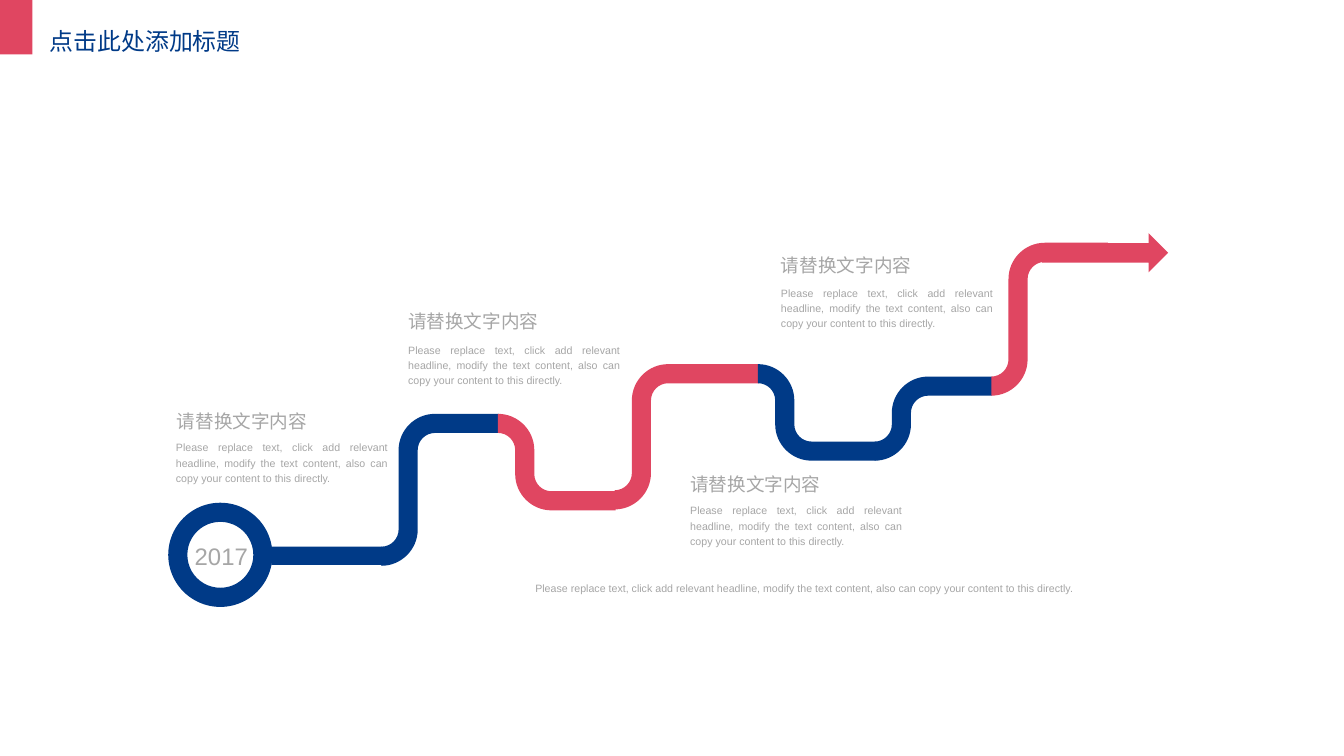
from math import copysign

from lxml import etree
from pptx import Presentation, util as u
from pptx.dml.color import RGBColor
from pptx.enum import shapes, text
from pptx.oxml.ns import qn

COLORS = {"red": "E04661", "navy": "003A87", "grey": "A6A6A6"}
LATIN, CJK = "Arial", "Noto Sans CJK SC"
HEADING = "请替换文字内容"
BODY = ("Please replace text, click add relevant headline, modify the text "
        "content, also can copy your content to this directly.")

# Road geometry in inches; the last figure bends a curve into a quarter circle
BEND_RADIUS = 0.28
HALF_WIDTH = 0.1
ROUNDNESS = 0.55

# Start x, start y, end y, end x, colour
ROAD_BEHIND_RING = [
    (6.43, 5.23, 3.91, 7.94, "red"),
    (9.15, 4.72, 4.04, 10.38, "navy"),
    (7.93, 3.91, 4.72, 9.16, "navy"),
    (3.99, 5.82, 4.43, 5.22, "navy"),
]
ROAD_IN_FRONT = [
    (5.21, 4.43, 5.24, 6.44, "red"),
    (10.37, 4.04, 2.64, 11.59, "red"),
]

# Heading left, top and width, then body left and top
MILESTONES = [
    (4.27, 3.2, 1.83, 4.27, 3.57),
    (7.22, 4.9, 1.91, 7.22, 5.25),
    (8.17, 2.61, 1.97, 8.17, 2.97),
    (1.85, 4.24, 1.75, 1.84, 4.59),
]


def paint(shape, color):
    shape.shadow.inherit = False
    shape.fill.solid()
    shape.fill.fore_color.rgb = RGBColor.from_string(COLORS[color])
    shape.line.fill.background()


def add_block(slide, preset, box, color):
    block = slide.shapes.add_shape(preset, *map(u.Inches, box))
    paint(block, color)
    return block


def add_text(parent, words, box, size=8, color="grey", font=LATIN, align=None,
             anchor=text.MSO_ANCHOR.TOP, inset=(0, 0), spacing=1.2, before=None):
    label = parent.shapes.add_textbox(*map(u.Inches, box))
    frame = label.text_frame
    frame.word_wrap = True
    frame.auto_size = text.MSO_AUTO_SIZE.SHAPE_TO_FIT_TEXT
    frame.vertical_anchor = anchor
    frame.margin_left = frame.margin_right = u.Inches(inset[0])
    frame.margin_top = frame.margin_bottom = u.Inches(inset[1])
    paragraph = frame.paragraphs[0]
    paragraph.alignment = align
    paragraph.line_spacing = spacing
    paragraph.space_before = before
    run = paragraph.add_run()
    run.text = words
    run.font.size = u.Pt(size)
    run.font.name = font
    run.font.color.rgb = RGBColor.from_string(COLORS[color])
    # East Asian characters take their own font element
    etree.SubElement(run.font._element, qn("a:ea")).set("typeface", font)


def road_edge(x_start, y_start, y_end, x_end, offset):
    """Corner points along one side of a two-bend stretch of road."""
    down = copysign(1, y_end - y_start)
    riser_x = x_start + BEND_RADIUS + offset
    return [
        (x_start, y_start - down * offset),
        (riser_x, y_start + down * BEND_RADIUS),
        (riser_x, y_end - down * BEND_RADIUS),
        (x_start + 2 * BEND_RADIUS, y_end - down * offset),
        (x_end, y_end - down * offset),
    ]


def round_bend(side, start, end, corner):
    """Turn a straight side into a curve that hugs the corner."""
    side.tag = qn("a:cubicBezTo")
    for index, base in enumerate((start, end)):
        control = etree.Element(qn("a:pt"))
        for axis, near, far in zip("xy", base, corner):
            control.set(axis, str(round(near + ROUNDNESS * (far - near))))
        side.insert(index, control)


def add_road(slide, x_start, y_start, y_end, x_end, color):
    stretch = (x_start, y_start, y_end, x_end)
    outline = (road_edge(*stretch, HALF_WIDTH)
               + road_edge(*stretch, -HALF_WIDTH)[::-1])
    points = [(u.Inches(x), u.Inches(y)) for x, y in outline]
    builder = slide.shapes.build_freeform(*points[0])
    builder.add_line_segments(points[1:], close=True)
    road = builder.convert_to_shape()
    paint(road, color)

    sides = list(road._element.iter(qn("a:lnTo")))
    local = [(int(pt.get("x")), int(pt.get("y")))
             for pt in road._element.iter(qn("a:pt"))]
    for end in (1, 3, 7, 9):
        a, b = local[end - 1], local[end]
        leaves_level = end in (1, 7)
        corner = (b[0], a[1]) if leaves_level else (a[0], b[1])
        round_bend(sides[end - 1], a, b, corner)


def add_milestone(slide, left, top, width, body_left, body_top):
    milestone = slide.shapes.add_group_shape()
    add_text(milestone, HEADING, (left, top, width, 0.28), size=14)
    add_text(milestone, BODY, (body_left, body_top, 2.22, 0.48),
             align=text.PP_ALIGN.JUSTIFY, anchor=text.MSO_ANCHOR.MIDDLE)


def main():
    deck = Presentation()
    deck.slide_width, deck.slide_height = u.Inches(14.06), u.Inches(7.91)
    slide = deck.slides.add_slide(deck.slide_layouts[6])
    preset = shapes.MSO_SHAPE

    # Corner tab
    add_block(slide, preset.RECTANGLE, (0, 0, 0.34, 0.57), "red")

    # Road, starting year and arrow
    for stretch in ROAD_BEHIND_RING:
        add_road(slide, *stretch)
    year_ring = add_block(slide, preset.DONUT, (1.76, 5.26, 1.09, 1.09), "navy")
    year_ring.adjustments[0] = 2 * HALF_WIDTH / 1.09
    add_text(slide, "2017", (1.86, 5.61, 0.91, 0.36), size=18,
             align=text.PP_ALIGN.CENTER)
    add_block(slide, preset.RECTANGLE, (2.84, 5.72, 1.16, 0.19), "navy")
    for stretch in ROAD_IN_FRONT:
        add_road(slide, *stretch)
    add_block(slide, preset.RIGHT_ARROW, (10.9, 2.44, 1.32, 0.41), "red")

    # Closing line and milestones
    add_text(slide, BODY, (5.6, 6.06, 6.76, 0.15), align=text.PP_ALIGN.JUSTIFY)
    for milestone in MILESTONES:
        add_milestone(slide, *milestone)

    # Title
    add_text(slide, "点击此处添加标题", (0.42, 0.23, 2.36, 0.39), size=18,
             color="navy", font=CJK, inset=(0.1, 0.05), spacing=None,
             before=u.Pt(10.6))

    deck.save("out.pptx")


main()
